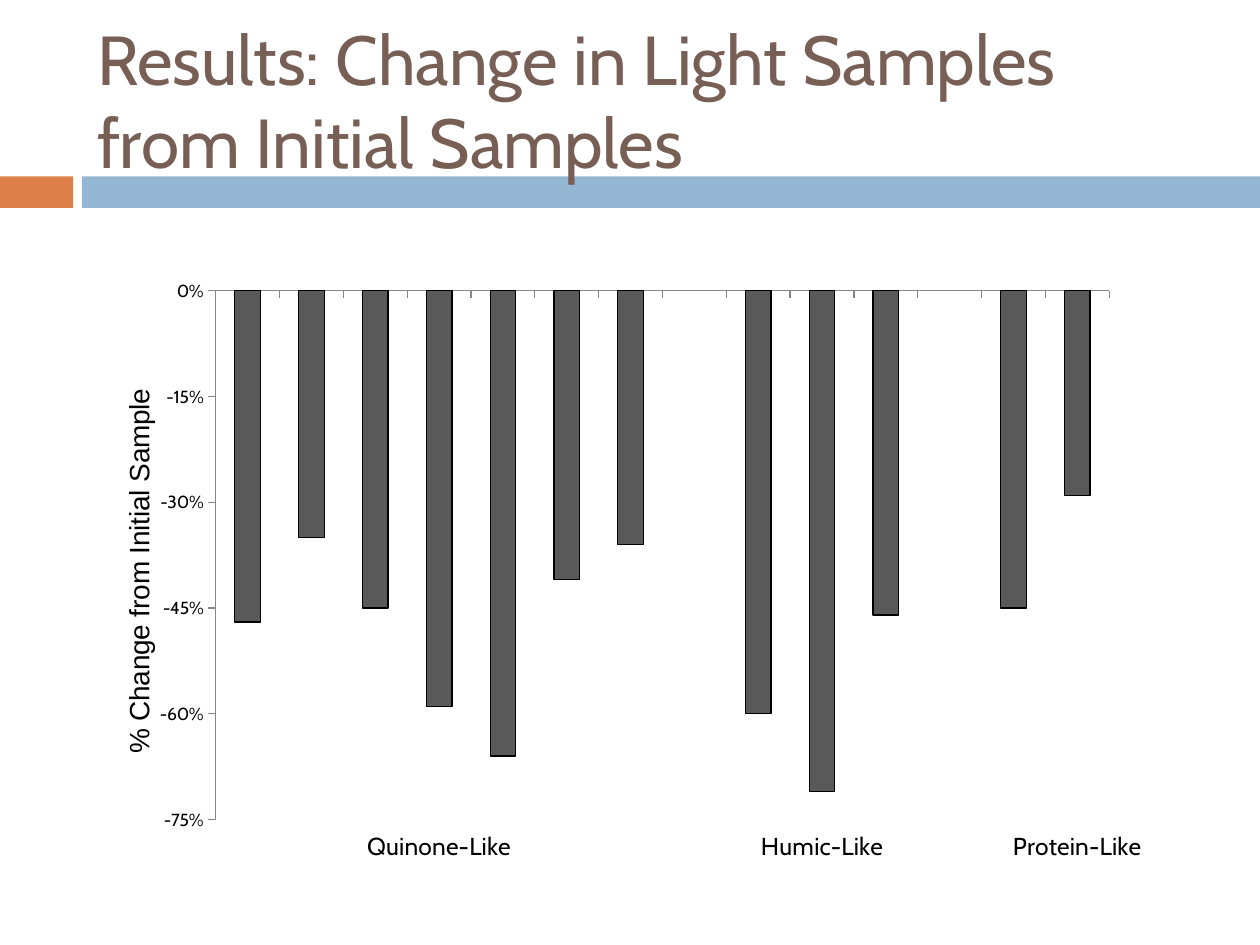
"""Build the results slide: a title, a two-part band and a column chart."""
from typing import NamedTuple

from lxml import etree
from pptx import Presentation
from pptx import util as u
from pptx.chart.data import CategoryChartData
from pptx.dml.color import RGBColor
from pptx.enum import chart as ch
from pptx.enum import shapes, text

WIDTH, HEIGHT = u.Inches(10), u.Inches(7.5)
FONT = "Cabin"


class Box(NamedTuple):
    """A rectangle in inches."""
    left: float
    top: float
    width: float
    height: float

    def lengths(self) -> list:
        return [u.Inches(value) for value in self]


class Band(NamedTuple):
    box: Box
    color: str


class Group(NamedTuple):
    """Neighbouring columns that share one label."""
    label: str
    label_column: int
    values: list


BANDS = [
    Band(Box(0, 1.4, 0.58, 0.25), "DD8047"),
    Band(Box(0.65, 1.4, 9.35, 0.25), "94B6D2"),
]
GROUPS = [
    Group("Quinone-Like", 3, [-0.47, -0.35, -0.45, -0.59, -0.66, -0.41, -0.36]),
    Group("Humic-Like", 1, [-0.6, -0.71, -0.46]),
    Group("Protein-Like", 1, [-0.45, -0.29]),
]
TITLE_BOX = Box(0.67, 0.25, 8.92, 1.08)
CHART_BOX = Box(0.92, 1.92, 8.17, 5.17)
PLOT_SHARES = Box(0.097, 0.075, 0.868, 0.812)


def rgb(color: str) -> RGBColor:
    return RGBColor.from_string(color)


def set_font(font, size: float, color: str = "000000", name: str = FONT) -> None:
    font.size, font.name, font.bold = u.Pt(size), name, False
    font.color.rgb = rgb(color)


def format_title(title, wording: str) -> None:
    title.left, title.top, title.width, title.height = TITLE_BOX.lengths()
    frame = title.text_frame
    frame.text = wording
    frame.word_wrap = True
    frame.auto_size = text.MSO_AUTO_SIZE.NONE
    frame.vertical_anchor = text.MSO_ANCHOR.MIDDLE
    paragraph = frame.paragraphs[0]
    paragraph.alignment = text.PP_ALIGN.LEFT
    set_font(paragraph.font, 39.6, "775F55")


def add_band(slide, band: Band) -> None:
    """Draw a band behind the title."""
    shape = slide.shapes.add_shape(shapes.MSO_SHAPE.RECTANGLE, *band.box.lengths())
    shape.shadow.inherit = False
    shape.fill.solid()
    shape.fill.fore_color.rgb = rgb(band.color)
    shape.line.fill.background()
    slide.shapes.title.element.addprevious(shape.element)


def column_data(groups: list) -> CategoryChartData:
    """Join the groups, with one empty column between neighbours."""
    labels, values = [], []
    for group in groups:
        if values:
            labels.append("")
            values.append(None)
        labels += [group.label if column == group.label_column else ""
                   for column in range(len(group.values))]
        values += group.values
    data = CategoryChartData(number_format="0%")
    data.categories = labels
    data.add_series("Series 1", values)
    return data


def place_plot(chart, shares: Box) -> None:
    """Fix the inner plot area as shares of the chart's size."""
    plot_area = chart.plots[0]._element.getparent()
    namespace = plot_area.nsmap["c"]
    for old in plot_area.findall(f"{{{namespace}}}layout"):
        plot_area.remove(old)
    layout = etree.Element(f"{{{namespace}}}layout")
    manual = etree.SubElement(layout, f"{{{namespace}}}manualLayout")
    settings = [("layoutTarget", "inner"), ("xMode", "edge"), ("yMode", "edge"),
                *zip("xywh", shares)]
    for tag, value in settings:
        etree.SubElement(manual, f"{{{namespace}}}{tag}", val=str(value))
    plot_area.insert(0, layout)


def format_axis(axis, size: float) -> None:
    axis.has_major_gridlines = False
    axis.major_tick_mark = ch.XL_TICK_MARK.OUTSIDE
    axis.minor_tick_mark = ch.XL_TICK_MARK.NONE
    axis.tick_label_position = ch.XL_TICK_LABEL_POSITION.LOW
    axis.format.line.color.rgb = rgb("868686")
    axis.format.line.width = u.Pt(0.75)
    set_font(axis.tick_labels.font, size)


def add_change_chart(slide) -> None:
    frame = slide.shapes.add_chart(ch.XL_CHART_TYPE.COLUMN_CLUSTERED,
                                   *CHART_BOX.lengths(), column_data(GROUPS))
    chart = frame.chart
    chart.has_legend = chart.has_title = False
    set_font(chart.font, 10)
    place_plot(chart, PLOT_SHARES)

    plot = chart.plots[0]
    plot.gap_width, plot.vary_by_categories = 150, False
    series = plot.series[0]
    series.invert_if_negative = False
    series.format.fill.solid()
    series.format.fill.fore_color.rgb = rgb("595959")
    series.format.line.color.rgb = rgb("000000")
    series.format.line.width = u.Pt(0.75)

    format_axis(chart.category_axis, 14)
    values = chart.value_axis
    format_axis(values, 10)
    values.minimum_scale, values.maximum_scale = -0.75, 0
    values.major_unit = 0.15
    values.tick_labels.number_format = "0%"
    values.tick_labels.number_format_is_linked = False
    title_frame = values.axis_title.text_frame
    title_frame.text = "% Change from Initial Sample"
    set_font(title_frame.paragraphs[0].font, 16, name="Arial")


def main() -> None:
    presentation = Presentation()
    presentation.slide_width, presentation.slide_height = WIDTH, HEIGHT
    slide = presentation.slides.add_slide(presentation.slide_layouts[5])
    format_title(slide.shapes.title,
                 "Results: Change in Light Samples from Initial Samples")
    for band in BANDS:
        add_band(slide, band)
    add_change_chart(slide)
    presentation.save("out.pptx")


if __name__ == "__main__":
    main()
